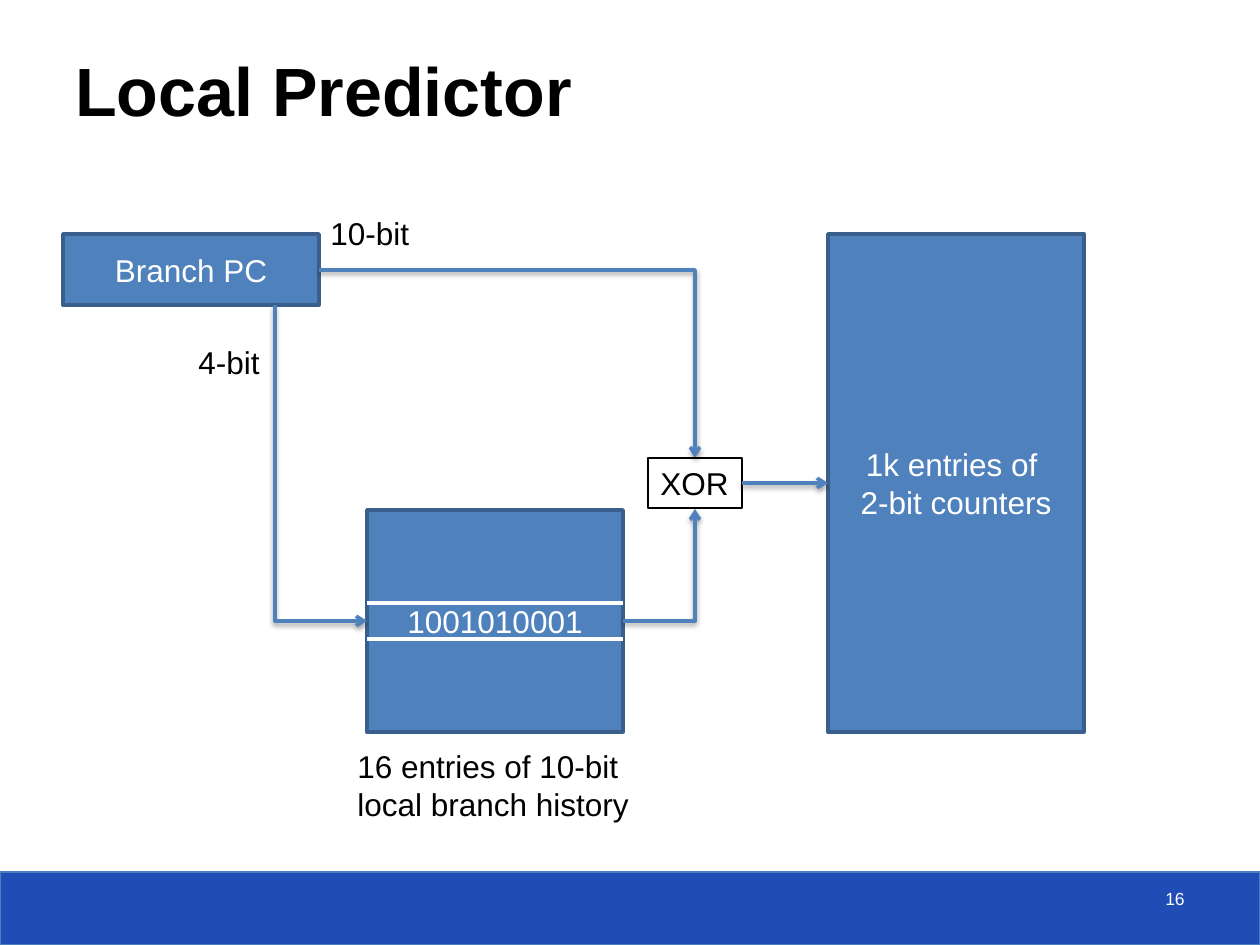
from lxml import etree
from pptx import Presentation
from pptx import util as u
from pptx.dml.color import RGBColor
from pptx.enum import shapes, text
from pptx.oxml.ns import qn

PX = 914400 / 126  # EMU per px
BLUE, EDGE, WHITE, BLACK = "4F81BD", "3A5F8C", "FFFFFF", "000000"
LEFT, CENTER, RIGHT = text.PP_ALIGN.LEFT, text.PP_ALIGN.CENTER, text.PP_ALIGN.RIGHT
TOP, MIDDLE, BOTTOM = text.MSO_ANCHOR.TOP, text.MSO_ANCHOR.MIDDLE, text.MSO_ANCHOR.BOTTOM


def emu(*lengths):
    return [u.Emu(round(n * PX)) for n in lengths]


def color(hex_string):
    return RGBColor.from_string(hex_string)


def add(parent, tag, **attrs):
    return etree.SubElement(parent, qn(tag), {k: str(v) for k, v in attrs.items()})


class Diagram:
    font = "Arial"

    def __init__(self, slide):
        self.slide = slide

    def set_words(self, shape, words, size=18, ink=BLACK, align=LEFT,
                  anchor=TOP, bold=False, wrap=True):
        frame = shape.text_frame
        frame.text = words
        frame.word_wrap = wrap
        frame.vertical_anchor = anchor
        if not wrap:
            frame.auto_size = text.MSO_AUTO_SIZE.SHAPE_TO_FIT_TEXT
        for paragraph in frame.paragraphs:
            paragraph.alignment = align
            font = paragraph.font
            font.name, font.size, font.bold = self.font, u.Pt(size), bold
            font.color.rgb = color(ink)

    def label(self, box, words, **style):
        shape = self.slide.shapes.add_textbox(*emu(*box))
        self.set_words(shape, words, **style)
        return shape

    def block(self, box, words="", fill=BLUE, edge=EDGE, weight=2):
        shape = self.slide.shapes.add_shape(shapes.MSO_SHAPE.RECTANGLE, *emu(*box))
        shape.shadow.inherit = False
        shape.fill.solid()
        shape.fill.fore_color.rgb = color(fill)
        shape.line.color.rgb = color(edge)
        shape.line.width = u.Pt(weight)
        if words:
            self.set_words(shape, words, ink=WHITE, align=CENTER, anchor=MIDDLE)
        return shape

    def line(self, start, end, ink=BLUE, arrow=False):
        connector = self.slide.shapes.add_connector(
            shapes.MSO_CONNECTOR.STRAIGHT, *emu(*start, *end))
        connector.line.color.rgb = color(ink)
        connector.line.width = u.Pt(2)
        properties = connector._element.spPr
        effects = add(properties, "a:effectLst")
        if arrow:
            add(properties.find(qn("a:ln")), "a:tailEnd", type="arrow")
            shadow = add(effects, "a:outerShdw", blurRad=40000, dist=20000,
                         dir=5400000, rotWithShape=0)
            add(add(shadow, "a:srgbClr", val=BLACK), "a:alpha", val=38000)
        return connector

    def elbow(self, start, end, down_first=False):
        """One-corner arrow; a downward start is the same bend turned by 270°."""
        if down_first:
            (x1, y1), (x2, y2) = start, end
            cx, cy = (x1 + x2) / 2, (y1 + y2) / 2
            dx, dy = (x2 - x1) / 2, (y2 - y1) / 2
            start, end = (cx + dy, cy - dx), (cx - dy, cy + dx)
        connector = self.line(start, end, arrow=True)
        properties = connector._element.spPr
        properties.find(qn("a:prstGeom")).set("prst", "bentConnector2")
        if down_first:
            properties.find(qn("a:xfrm")).set("rot", "16200000")


def main():
    deck = Presentation()
    deck.slide_width, deck.slide_height = emu(1260, 945)
    diagram = Diagram(deck.slides.add_slide(deck.slide_layouts[6]))

    # Footer band, title and page number
    diagram.block((0, 872, 1260, 73), fill="204DB5", edge="4B7EBC", weight=0.75)
    title = diagram.label((63, 32, 1162, 104), "Local Predictor",
                          size=39, bold=True, anchor=BOTTOM)
    title.fill.solid()
    title.fill.fore_color.rgb = color(WHITE)
    add(title._element.spPr.find(".//" + qn("a:srgbClr")), "a:alpha", val=75000)
    diagram.label((903, 882, 294, 42), "16", size=10, ink=WHITE, align=RIGHT)

    # Predictor tables
    diagram.block((63, 234, 256, 71), "Branch PC")
    diagram.block((367, 510, 256, 222), "1001010001")
    counters = diagram.block((828, 234, 256, 498), "1k entries of \v2-bit counters")

    # Index into the local history
    diagram.elbow((275, 305), (367, 621), down_first=True)
    diagram.label((186, 337, 87, 50), "4-bit", wrap=False)
    diagram.label((345, 741, 300, 89),
                  "16 entries of 10-bit \vlocal branch history", wrap=False)
    for y in (603, 639):
        diagram.line((367, y), (623, y), ink=WHITE)

    # XOR of history and branch address
    diagram.elbow((623, 621), (695, 509))
    diagram.label((318, 208, 105, 50), "10-bit", wrap=False)
    diagram.elbow((319, 270), (695, 458))
    xor = diagram.label((648, 458, 94, 50), "XOR", wrap=False)
    xor.line.color.rgb = color(BLACK)
    xor.line.width = u.Pt(0.75)
    lookup = diagram.line((742, 483), (828, 483), arrow=True)
    lookup.begin_connect(xor, 3)
    lookup.end_connect(counters, 1)

    deck.save("out.pptx")


if __name__ == "__main__":
    main()
